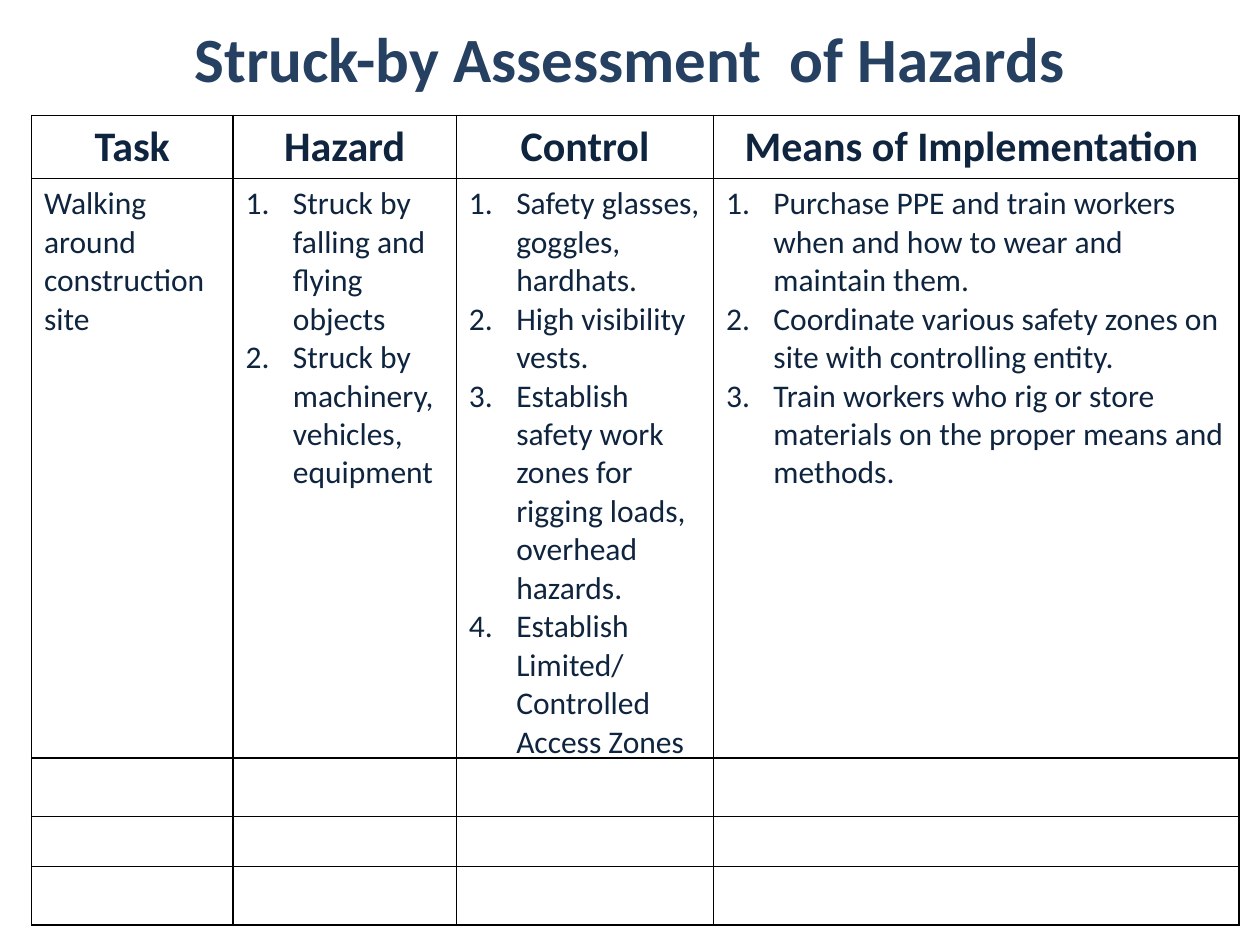
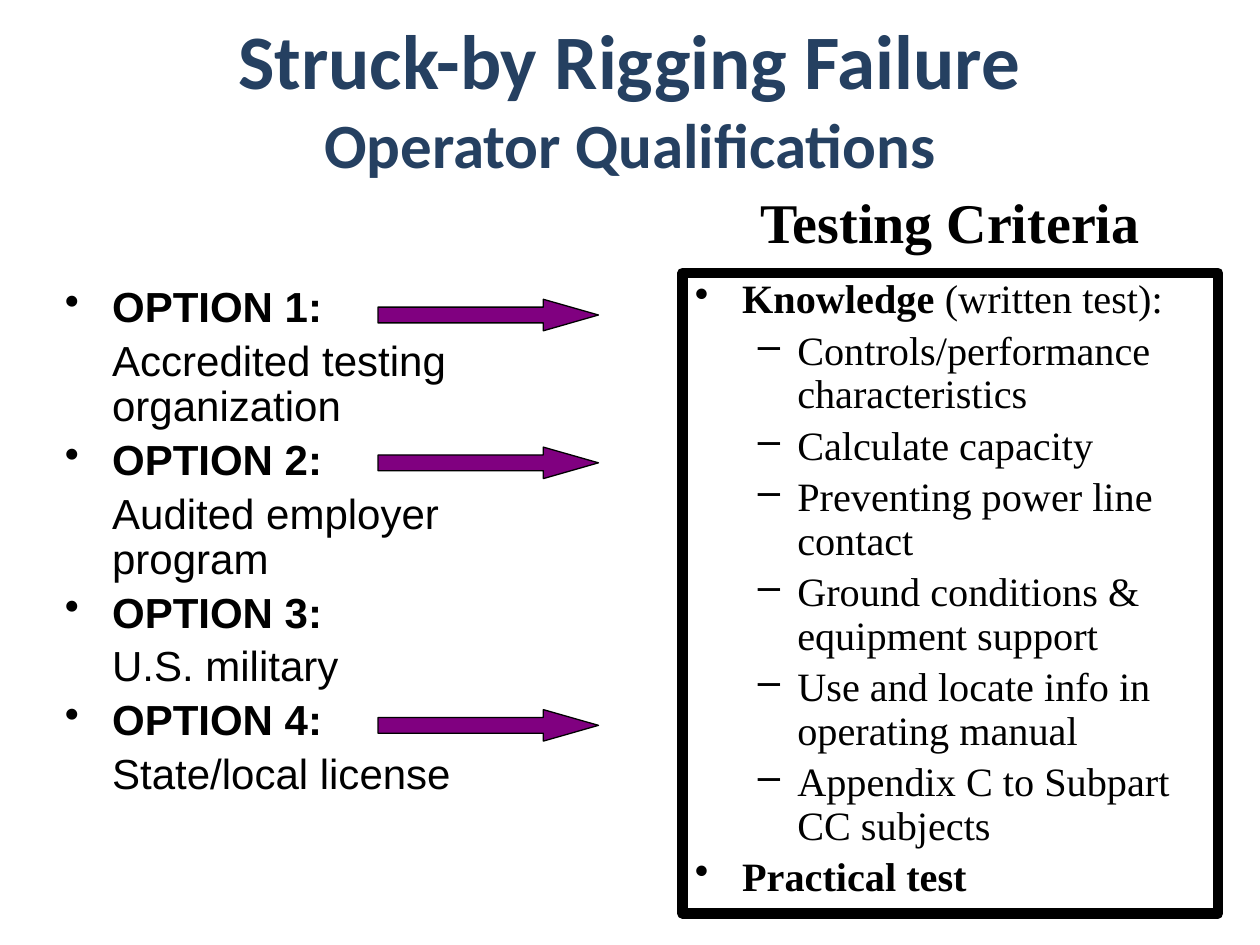
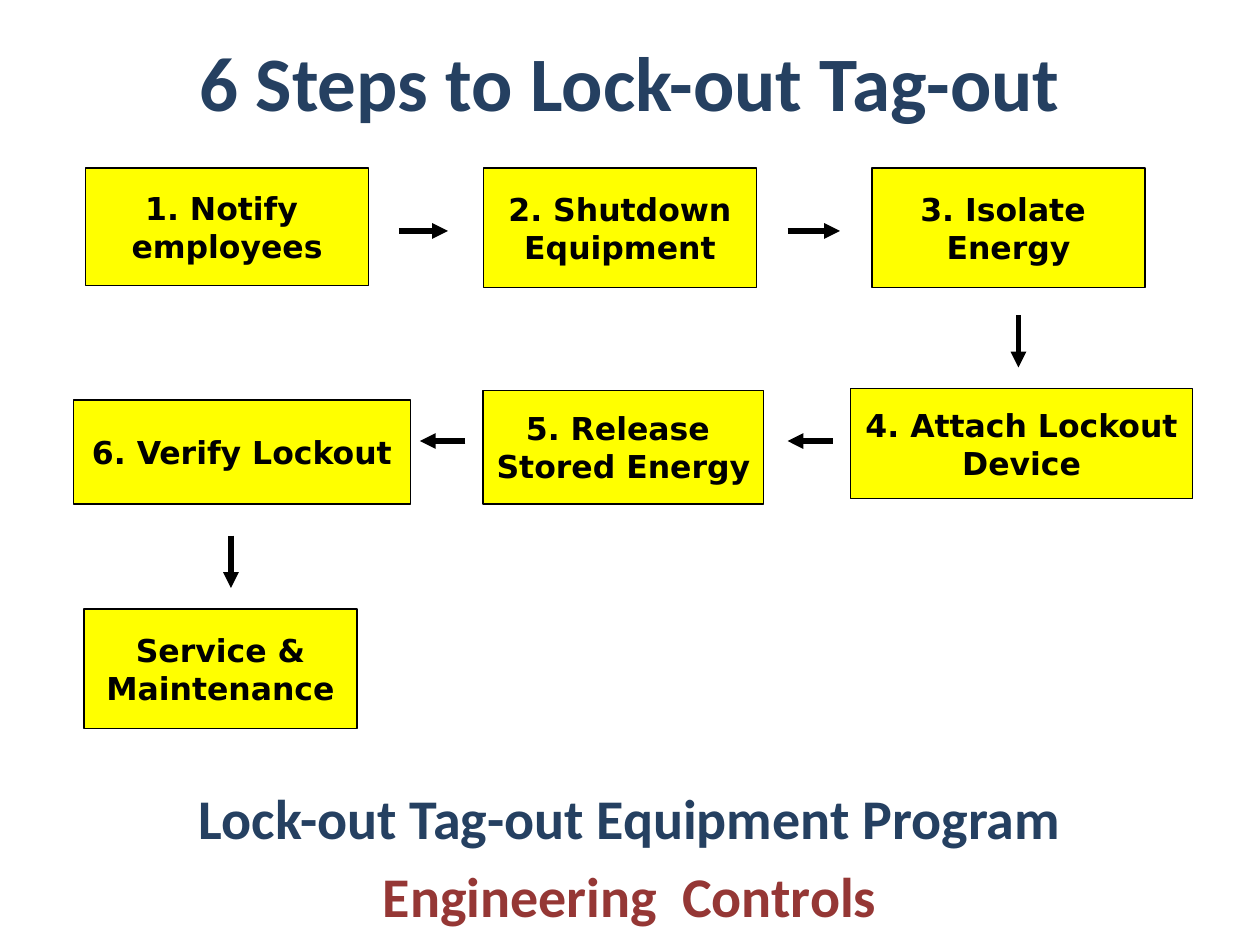
from lxml.etree import SubElement
from pptx import Presentation
from pptx.dml.color import RGBColor
from pptx.enum.shapes import MSO_CONNECTOR, MSO_SHAPE
from pptx.enum.text import MSO_ANCHOR, PP_ALIGN
from pptx.oxml import parse_xml
from pptx.oxml.ns import nsdecls, qn
from pptx.util import Pt

NAVY = RGBColor(0x25, 0x40, 0x61)
INK = RGBColor(0x0F, 0x24, 0x3E)
RED = RGBColor(0x95, 0x37, 0x35)
PURPLE = RGBColor(0x80, 0x00, 0x80)
YELLOW = RGBColor(0xFF, 0xFF, 0x00)
BLACK = RGBColor(0, 0, 0)
WHITE = RGBColor(0xFF, 0xFF, 0xFF)

HANGING = 27
NUMBER = '<a:buAutoNum %s type="arabicPeriod"/>' % nsdecls("a")
DOT = '<a:buChar %s char="•"/>' % nsdecls("a")
DASH = '<a:buChar %s char="–"/>' % nsdecls("a")


def write(text_frame, lines, size, font_name, color, bold=True, alignment=None):
    """Fill the frame with one paragraph per line and return the paragraphs."""
    text_frame.text = "\n".join(lines)
    for paragraph in text_frame.paragraphs:
        paragraph.alignment = alignment
        font = paragraph.font
        font.size, font.name, font.bold = Pt(size), font_name, bold
        font.color.rgb = color
    return text_frame.paragraphs


def set_marker(paragraph, marker, margin, hanging):
    """Give a written paragraph a bullet or number with a hanging indent."""
    properties = paragraph._p.get_or_add_pPr()
    properties.set("marL", str(Pt(margin)))
    properties.set("indent", str(Pt(-hanging)))
    properties.find(qn("a:defRPr")).addprevious(parse_xml(marker))


presentation = Presentation()
presentation.slide_width = Pt(720)
presentation.slide_height = Pt(540)
hazard_slide, rigging_slide, lockout_slide = [
    presentation.slides.add_slide(presentation.slide_layouts[6]) for _ in range(3)
]

# Titles: slide, text, size, vertical centre
TITLE_HEIGHT = 60
for slide, text, size, middle in [
    (hazard_slide, "Struck-by Assessment  of Hazards", 36, 33),
    (rigging_slide, "Struck-by Rigging Failure", 44, 33.5),
    (rigging_slide, "Operator Qualifications", 36, 82),
    (lockout_slide, "6 Steps to Lock-out Tag-out", 44, 46),
]:
    title = slide.shapes.add_textbox(
        Pt(36), Pt(middle - TITLE_HEIGHT / 2), Pt(648), Pt(TITLE_HEIGHT))
    title.text_frame.word_wrap = True
    title.text_frame.vertical_anchor = MSO_ANCHOR.MIDDLE
    write(title.text_frame, [text], size, "Calibri", NAVY, alignment=PP_ALIGN.CENTER)

# Slide 1: hazard table
headings = ["Task", "Hazard", "Control", "Means of Implementation "]
assessment = [
    ["Walking around construction site"],
    ["Struck by falling and flying objects",
     "Struck by machinery, vehicles, equipment"],
    ["Safety glasses, goggles, hardhats.",
     "High visibility vests.",
     "Establish safety work zones for rigging loads, overhead hazards.",
     "Establish Limited/ Controlled Access Zones"],
    ["Purchase PPE and train workers when and how to wear and maintain them.",
     "Coordinate various safety zones on site with controlling entity.",
     "Train workers who rig or store materials on the proper means and methods."],
]
column_widths = [115.2, 127.6, 147, 300.2]
row_heights = [36, 331.2, 33.2, 28.8, 33.2]
table = hazard_slide.shapes.add_table(
    len(row_heights), len(column_widths), Pt(18), Pt(66),
    Pt(sum(column_widths)), Pt(sum(row_heights))).table
table.first_row = table.horz_banding = False
for column, width in zip(table.columns, column_widths):
    column.width = Pt(width)
for row, height in zip(table.rows, row_heights):
    row.height = Pt(height)
for cell in table.iter_cells():
    cell_properties = cell._tc.get_or_add_tcPr()
    for side in ("a:lnL", "a:lnR", "a:lnT", "a:lnB"):
        border = SubElement(cell_properties, qn(side), w=str(Pt(1)))
        border_fill = SubElement(border, qn("a:solidFill"))
        SubElement(border_fill, qn("a:srgbClr"), val=str(BLACK))
    cell.fill.solid()
    cell.fill.fore_color.rgb = WHITE
for index, (heading, lines) in enumerate(zip(headings, assessment)):
    write(table.cell(0, index).text_frame, [heading], 24, "Calibri", INK,
          alignment=PP_ALIGN.CENTER)
    for paragraph in write(table.cell(1, index).text_frame, lines, 18, "Calibri",
                           INK, bold=False):
        if index > 0:
            set_marker(paragraph, NUMBER, HANGING, HANGING)

# Slide 2: operator options
options = ["Accredited testing organization", "Audited employer program",
           "U.S. military", "State/local license"]
option_lines = []
for number, option in enumerate(options, 1):
    option_lines += [f"OPTION {number}:", option]
option_box = rigging_slide.shapes.add_textbox(Pt(30), Pt(160), Pt(264), Pt(348))
option_box.text_frame.word_wrap = True
for index, paragraph in enumerate(
        write(option_box.text_frame, option_lines, 24, "Arial", BLACK)):
    paragraph.line_spacing = 0.9
    paragraph.space_before = Pt(4.8)
    if index % 2 == 0:
        set_marker(paragraph, DOT, HANGING, HANGING)
    else:
        paragraph.font.bold = False
        set_marker(paragraph, "<a:buNone %s/>" % nsdecls("a"), HANGING, 0)

for top in (171, 255.5, 405.5):
    arrow = rigging_slide.shapes.add_shape(
        MSO_SHAPE.RIGHT_ARROW, Pt(216), Pt(top), Pt(126), Pt(18))
    arrow.adjustments[0], arrow.adjustments[1] = 0.5, 1.75
    arrow.shadow.inherit = False
    arrow.fill.solid()
    arrow.fill.fore_color.rgb = PURPLE
    arrow.line.color.rgb = BLACK
    arrow.line.width = Pt(0.75)

# Slide 2: testing criteria
criteria_heading = rigging_slide.shapes.add_textbox(Pt(426), Pt(108), Pt(234), Pt(42))
criteria_heading.text_frame.word_wrap = False
write(criteria_heading.text_frame, ["Testing Criteria"], 32, "Times New Roman", BLACK,
      alignment=PP_ALIGN.CENTER)[0].line_spacing = 0.9

criteria = [
    "Knowledge",
    "Controls/performance characteristics",
    "Calculate capacity",
    "Preventing power line contact",
    "Ground conditions & equipment support",
    "Use and locate info in operating manual",
    "Appendix C to Subpart CC subjects",
    "Practical test",
]
criteria_box = rigging_slide.shapes.add_shape(
    MSO_SHAPE.RECTANGLE, Pt(390), Pt(156), Pt(306), Pt(366))
criteria_box.shadow.inherit = False
criteria_box.fill.solid()
criteria_box.fill.fore_color.rgb = WHITE
criteria_box.line.color.rgb = BLACK
criteria_box.line.width = Pt(6)
criteria_box.text_frame.word_wrap = True
criteria_box.text_frame.vertical_anchor = MSO_ANCHOR.TOP
criteria_paragraphs = write(criteria_box.text_frame, criteria, 23, "Times New Roman",
                            BLACK, alignment=PP_ALIGN.LEFT)
for paragraph in criteria_paragraphs:
    paragraph.line_spacing = 0.9
    paragraph.space_before = Pt(4.6)
    if paragraph.text in ("Knowledge", "Practical test"):
        set_marker(paragraph, DOT, HANGING, HANGING)
    else:
        paragraph.level = 1
        paragraph.font.bold = False
        set_marker(paragraph, DASH, 58.5, 22.5)
written_test = criteria_paragraphs[0].add_run()
written_test.text = " (written test):"
written_test.font.bold = False

# Slide 3: lock-out steps
for lines, left, top, width, height in [
    (["1. Notify ", "employees"], 49, 96, 161.5, 67),
    (["2. Shutdown", "Equipment"], 276.3, 96, 156, 68.4),
    (["3. Isolate ", "Energy"], 498.3, 96, 156, 68.4),
    (["4. Attach Lockout", "Device"], 486, 222, 195.6, 63),
    (["5. Release ", "Stored Energy"], 276, 223, 160.5, 65),
    (["6. Verify Lockout"], 42, 228.5, 192.5, 59.5),
    (["Service &", "Maintenance"], 48, 348, 156, 68.4),
]:
    step = lockout_slide.shapes.add_shape(
        MSO_SHAPE.FLOWCHART_PROCESS, Pt(left), Pt(top), Pt(width), Pt(height))
    step.shadow.inherit = False
    step.fill.solid()
    step.fill.fore_color.rgb = YELLOW
    step.line.color.rgb = BLACK
    step.line.width = Pt(0.75)
    step.text_frame.word_wrap = False
    step.text_frame.vertical_anchor = MSO_ANCHOR.MIDDLE
    write(step.text_frame, lines, 18, "DejaVu Sans", BLACK, alignment=PP_ALIGN.CENTER)

for start_x, start_y, end_x, end_y in [
    (228, 132, 256, 132),
    (450, 132, 480, 132),
    (582, 180, 582, 210),
    (476, 252, 450, 252),
    (266, 252, 240, 252),
    (132, 306, 132, 336),
]:
    connector = lockout_slide.shapes.add_connector(
        MSO_CONNECTOR.STRAIGHT, Pt(start_x), Pt(start_y), Pt(end_x), Pt(end_y))
    connector.line.color.rgb = BLACK
    connector.line.width = Pt(3)
    SubElement(connector.line._get_or_add_ln(), qn("a:tailEnd"), type="triangle")
    SubElement(connector._element.spPr, qn("a:effectLst"))

program_box = lockout_slide.shapes.add_textbox(Pt(18), Pt(444), Pt(684), Pt(96))
program_box.text_frame.word_wrap = True
program_paragraphs = write(
    program_box.text_frame,
    ["Lock-out Tag-out Equipment Program", "Engineering  Controls"],
    32, "Calibri", NAVY, alignment=PP_ALIGN.CENTER)
for paragraph in program_paragraphs:
    paragraph.space_before = Pt(6.4)
program_paragraphs[1].font.color.rgb = RED

presentation.save("out.pptx")
